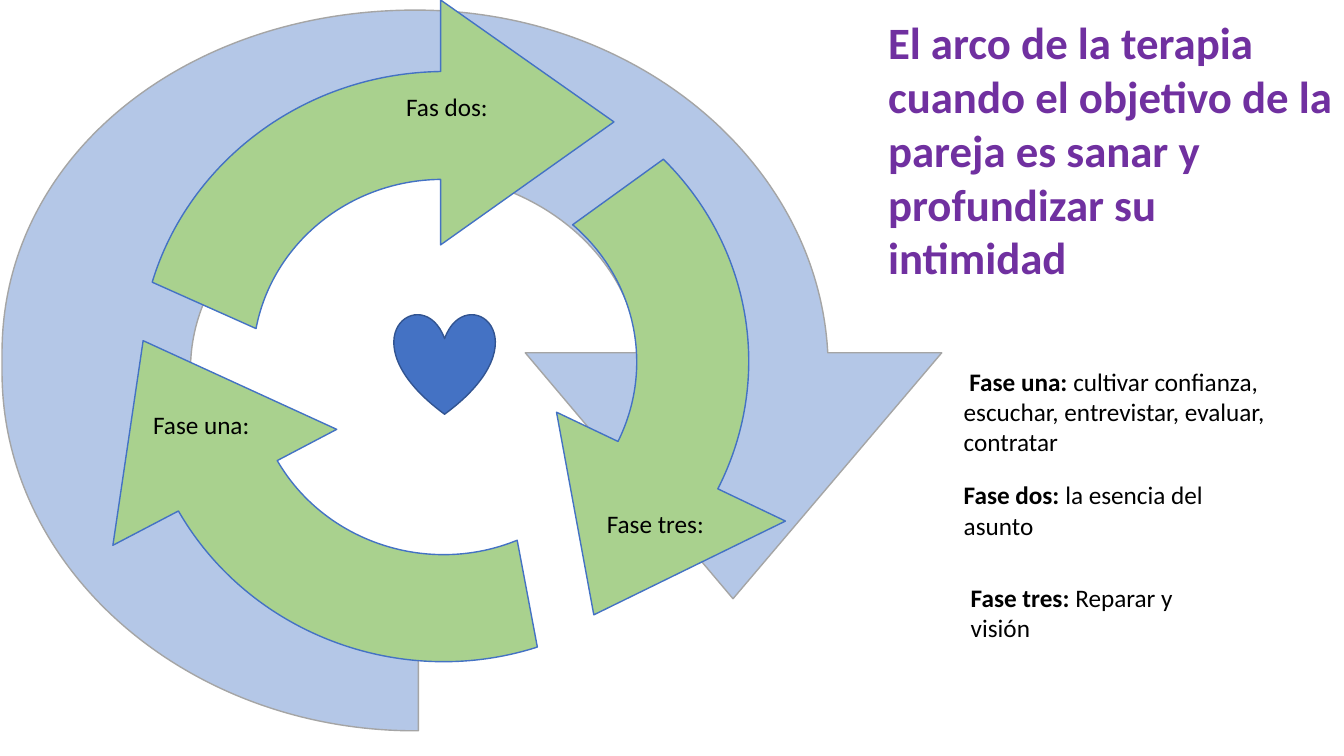
from lxml import etree
from pptx import Presentation
from pptx import util as u
from pptx.dml.color import RGBColor
from pptx.enum import shapes, text
from pptx.oxml import ns

THEME = {
    "font": "Calibri", "title": 32, "body": 18, "row": 0.3, "pad": 0.05,
    "ink": "000000", "violet": "7030A0",
    "sweep": ("B4C7E7", "A5A5A5"),
    "phase": ("A9D18E", "4472C4"),
    "heart": ("4472C4", "325491"),
}

# fmt: off
SWEEP_BOX = (0.02, 0.1, 9.32, 7.15)
SWEEP = [[
    (4.12, 0.1), (1.84, 0.1, 0.02, 1.55, 0.02, 3.5), (0.02, 3.69),
    (0.02, 5.65, 1.86, 7.25, 4.12, 7.25), (4.15, 7.25), (4.15, 5.63),
    (4.12, 5.63), (2.89, 5.63, 1.89, 4.76, 1.89, 3.69), (1.89, 3.63),
    (1.91, 2.58, 2.89, 1.73, 4.1, 1.72), (4.14, 1.72),
    (5.3, 1.73, 6.25, 2.51, 6.34, 3.5), (5.21, 3.5), (7.27, 5.94),
    (9.34, 3.5), (8.21, 3.5), (8.11, 1.62, 6.33, 0.11, 4.14, 0.1),
]]
PHASE_BOX = (1.12, 0, 6.67, 6.57)
PHASES = [
    [(4.37, 0), (4.37, 0.71), (3.01, 0.73, 1.87, 1.61, 1.51, 2.8),
     (2.54, 3.26), (2.7, 2.42, 3.46, 1.79, 4.37, 1.78), (4.37, 2.43),
     (6.09, 1.21)],
    [(6.58, 1.58), (5.68, 2.23), (6.3, 2.76, 6.5, 3.63, 6.13, 4.38),
     (5.52, 4.09), (5.89, 6.1), (7.79, 5.17), (7.12, 4.85),
     (7.69, 3.73, 7.44, 2.43, 6.58, 1.58)],
    [(1.42, 3.38), (1.12, 5.41), (1.77, 5.07),
     (2.48, 6.3, 3.99, 6.85, 5.33, 6.42), (5.13, 5.36),
     (4.25, 5.72, 3.22, 5.38, 2.75, 4.57), (3.34, 4.26)],
]
# fmt: on
HEART = (3.91, 3.11, 1, 1)
TITLE = ("El arco de la terapia cuando el objetivo de la pareja es sanar y "
         "profundizar su intimidad")
TITLE_BOX = (8.71, 0.1, 4.63, 2.79)
LABELS = [
    ("Fase una:", (1.42, 3.11, 1.84, 1.62), 3),
    ("Fas dos:", (3.93, 0.86, 1.5, 0.4), 0),
    ("Fase tres:", (5.92, 4.99, 2.57, 0.4), 0),
]
NOTES = [
    ("Fase tres: ", "Reparar y visión", (9.53, 5.73, 2.56, 0.71), 0),
    ("Fase dos: ", "la esencia del asunto", (9.46, 4.11, 3.01, 1.31), 2),
    (" Fase una: ", "cultivar confianza, escuchar, entrevistar, evaluar, contratar",
     (9.46, 2.68, 3.37, 1.92), 3),
]


def paint(shape, look):
    fill, line = look
    shape.shadow.inherit = False
    shape.fill.solid()
    shape.fill.fore_color.rgb = RGBColor.from_string(fill)
    shape.line.color.rgb = RGBColor.from_string(line)
    shape.line.width = u.Pt(1)


def bend(shape, parts, box):
    left, top, width, height = map(u.Inches, box)
    shape.left, shape.top, shape.width, shape.height = left, top, width, height
    track = shape.element.find(".//" + ns.qn("a:path"))
    track.set("w", str(width))
    track.set("h", str(height))
    steps = [step for step in track if step.tag != ns.qn("a:close")]
    for step, part in zip(steps, parts):
        if len(part) == 6:
            step.tag_name = None
            curve = etree.SubElement(track, ns.qn("a:cubicBezTo"))
            track.replace(step, curve)
            step = curve
        for dot in list(step):
            step.remove(dot)
        for x, y in zip(part[::2], part[1::2]):
            etree.SubElement(step, ns.qn("a:pt"), x=str(u.Inches(x) - left),
                             y=str(u.Inches(y) - top))


def draw(slide, loops, box, look):
    ends = [[tuple(map(u.Inches, part[-2:])) for part in loop] for loop in loops]
    pen = slide.shapes.build_freeform(*ends[0][0])
    for i, dots in enumerate(ends):
        if i:
            pen.move_to(*dots[0])
        pen.add_line_segments(dots[1:], close=True)
    shape = pen.convert_to_shape()
    bend(shape, sum(loops, []), box)
    paint(shape, look)


def write(slide, words, box, lead="", size=THEME["body"], color=THEME["ink"],
          bold=False, skip=0):
    frame = slide.shapes.add_textbox(*map(u.Inches, box)).text_frame
    frame.word_wrap = True
    frame.auto_size = text.MSO_AUTO_SIZE.SHAPE_TO_FIT_TEXT
    frame.margin_top = u.Inches(THEME["pad"] + skip * THEME["row"])
    for part, heavy in ((lead, True), (words, bold)):
        if part:
            run = frame.paragraphs[0].add_run()
            run.text = part
            run.font.name = THEME["font"]
            run.font.size = u.Pt(size)
            run.font.bold = heavy
            run.font.color.rgb = RGBColor.from_string(color)


def main():
    deck = Presentation()
    deck.slide_width, deck.slide_height = u.Inches(13.33), u.Inches(7.5)
    slide = deck.slides.add_slide(deck.slide_layouts[6])
    draw(slide, SWEEP, SWEEP_BOX, THEME["sweep"])
    draw(slide, PHASES, PHASE_BOX, THEME["phase"])
    write(slide, TITLE, TITLE_BOX, size=THEME["title"], color=THEME["violet"], bold=True)
    for words, box, skip in LABELS:
        write(slide, words, box, skip=skip)
    for lead, words, box, skip in NOTES:
        write(slide, words, box, lead=lead, skip=skip)
    heart = slide.shapes.add_shape(shapes.MSO_SHAPE.HEART, *map(u.Inches, HEART))
    paint(heart, THEME["heart"])
    deck.save("out.pptx")


if __name__ == "__main__":
    main()
